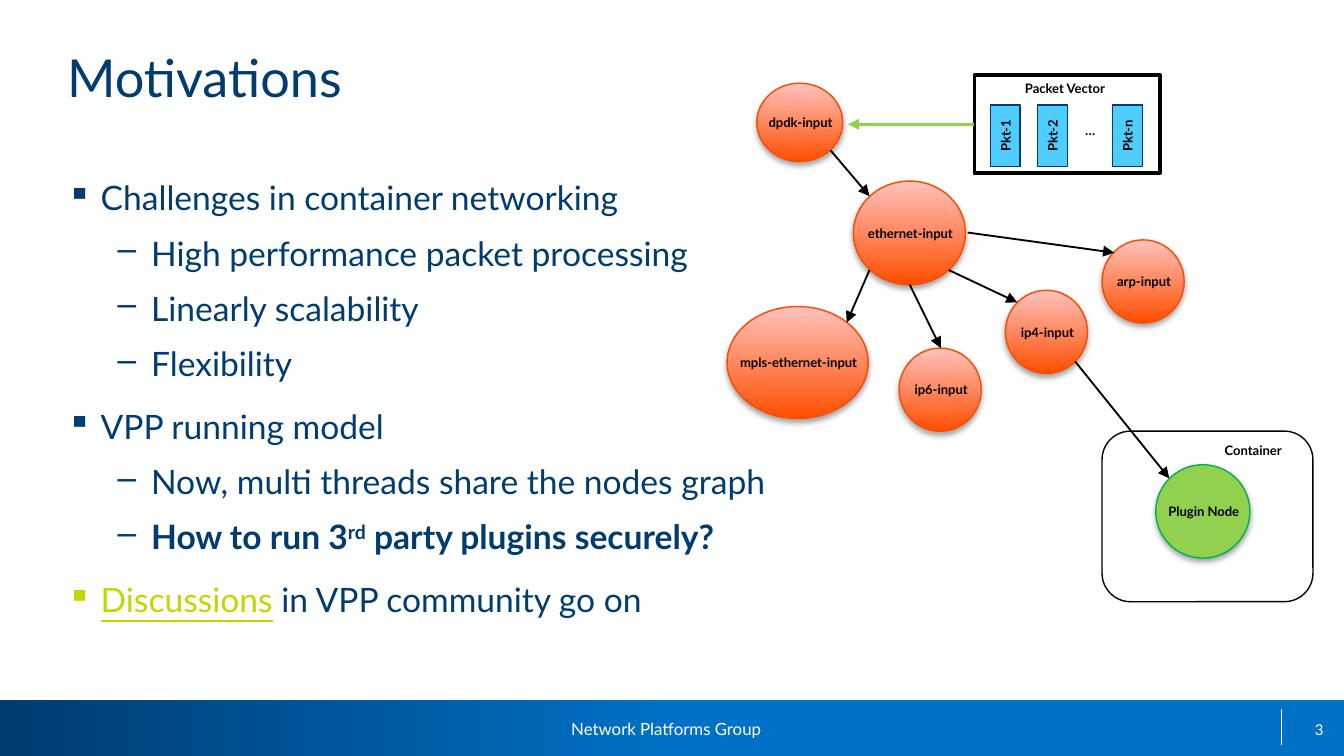
import dataclasses

import lxml.etree
import pptx
import pptx.dml.color
import pptx.enum.shapes
import pptx.enum.text
import pptx.oxml.ns
import pptx.util

Pt = pptx.util.Pt
qn = pptx.oxml.ns.qn
SHAPE = pptx.enum.shapes.MSO_SHAPE
ALIGN = pptx.enum.text.PP_ALIGN
ANCHOR = pptx.enum.text.MSO_ANCHOR


@dataclasses.dataclass(frozen=True)
class Theme:
    font: str = "Lato"
    navy: str = "003C71"
    blue: str = "0071C5"
    white: str = "FFFFFF"
    black: str = "000000"
    lime: str = "C3D600"
    packet: str = "50CDFF"
    node: tuple = ("FF4E00", "FFC2BD")
    node_line: str = "F94C00"
    plugin: str = "92D050"
    plugin_line: str = "00B050"
    title_size: float = 28
    body_size: float = 18
    footer_size: float = 9
    number_size: float = 8
    label_size: float = 7


def rgb(value):
    return pptx.dml.color.RGBColor.from_string(value)


class Deck:
    def __init__(self, theme):
        self.theme = theme
        self.prs = pptx.Presentation()
        self.prs.slide_width, self.prs.slide_height = Pt(720), Pt(405)
        self.s = self.prs.slides.add_slide(self.prs.slide_layouts[5])

    def style(self, r, size, color, bold=False):
        r.font.name = self.theme.font
        r.font.size = Pt(size)
        r.font.bold = bold
        r.font.color.rgb = rgb(color)

    def frame(self, tf, inset=(0, 0), anchor=ANCHOR.TOP, wrap=True):
        tf.margin_left = tf.margin_right = Pt(inset[0])
        tf.margin_top = tf.margin_bottom = Pt(inset[1])
        tf.vertical_anchor = anchor
        tf.word_wrap = wrap

    def set_text(self, tf, text, size, color, bold=False, align=ALIGN.LEFT):
        tf.text = text
        p = tf.paragraphs[0]
        p.alignment = align
        self.style(p.runs[0], size, color, bold)

    def title(self, text, box):
        sp = self.s.shapes.title
        sp.left, sp.top, sp.width, sp.height = map(Pt, box)
        self.frame(sp.text_frame)
        self.set_text(sp.text_frame, text, self.theme.title_size, self.theme.navy)

    def text(self, text, box, size, color, align=ALIGN.LEFT, anchor=ANCHOR.TOP):
        tf = self.s.shapes.add_textbox(*map(Pt, box)).text_frame
        self.frame(tf, anchor=anchor)
        self.set_text(tf, text, size, color, align=align)

    def label_text(self, tf, text):
        self.frame(tf, (7.2, 3.6), ANCHOR.MIDDLE, False)
        self.set_text(tf, text, self.theme.label_size, self.theme.black, True, ALIGN.CENTER)

    def label(self, text, cx, cy, width):
        sp = self.s.shapes.add_textbox(Pt(cx - width / 2), Pt(cy - 8), Pt(width), Pt(16))
        self.label_text(sp.text_frame, text)

    def bullets(self, items, box):
        tf = self.s.shapes.add_textbox(*map(Pt, box)).text_frame
        self.frame(tf)
        levels = {1: (18, 12, "▪"), 2: (45, 8, "–")}
        for i, (level, runs) in enumerate(items):
            p = tf.add_paragraph() if i else tf.paragraphs[0]
            left, before, char = levels[level]
            pPr = p._p.get_or_add_pPr()
            pPr.set("marL", str(Pt(left)))
            pPr.set("indent", str(-Pt(18)))
            lxml.etree.SubElement(pPr, qn("a:buChar")).set("char", char)
            p.level = level - 1
            p.space_before = Pt(before if i else 0)
            for text, look in runs:
                r = p.add_run()
                r.text = text
                color = self.theme.lime if look == "link" else self.theme.navy
                self.style(r, self.theme.body_size, color, look in ("bold", "super"))
                if look == "link":
                    r.font.underline = True
                if look == "super":
                    r._r.get_or_add_rPr().set("baseline", "30000")

    def shape(self, kind, box, fill=None, line=None, width=0.75):
        sp = self.s.shapes.add_shape(kind, *map(Pt, box))
        sp.shadow.inherit = False
        if fill:
            sp.fill.solid()
            sp.fill.fore_color.rgb = rgb(fill)
        else:
            sp.fill.background()
        if line:
            sp.line.color.rgb = rgb(line)
            sp.line.width = Pt(width)
        else:
            sp.line.fill.background()
        return sp

    def gradient(self, sp, colors, angle, end=1.0):
        sp.fill.gradient()
        sp.fill.gradient_angle = angle
        for stop, color, position in zip(sp.fill.gradient_stops, colors, (0, end)):
            stop.color.rgb = rgb(color)
            stop.position = position

    def node(self, text, box, label_width, plugin=False):
        t = self.theme
        line = t.plugin_line if plugin else t.node_line
        sp = self.shape(SHAPE.OVAL, box, t.plugin, line)
        if not plugin:
            self.gradient(sp, t.node, 90)
        effects = sp._element.spPr.find(qn("a:effectLst"))
        shadow = lxml.etree.SubElement(
            effects, qn("a:outerShdw"), blurRad=str(Pt(3.1)), dist=str(Pt(1.8)),
            dir="5400000", rotWithShape="0")
        color = lxml.etree.SubElement(shadow, qn("a:srgbClr"), val=t.black)
        lxml.etree.SubElement(color, qn("a:alpha"), val="35000")
        x, y, w, h = box
        self.label(text, x + w / 2 + 0.5, y + h / 2, label_width)

    def packet(self, text, cx, cy):
        sp = self.shape(SHAPE.RECTANGLE, (cx - 16.5, cy - 8, 33, 16),
                        self.theme.packet, self.theme.navy)
        sp.rotation = 270
        self.label_text(sp.text_frame, text)

    def line(self, start, end, color, width=1, arrow=True):
        c = self.s.shapes.add_connector(
            pptx.enum.shapes.MSO_CONNECTOR.STRAIGHT, *map(Pt, start + end))
        c.line.color.rgb = rgb(color)
        c.line.width = Pt(width)
        if arrow:
            ln = c._element.spPr.find(qn("a:ln"))
            lxml.etree.SubElement(ln, qn("a:tailEnd"), type="triangle")
        lxml.etree.SubElement(c._element.spPr, qn("a:effectLst"))
        return c


def main():
    t = Theme()
    d = Deck(t)

    bar = d.shape(SHAPE.RECTANGLE, (0, 375, 720, 30), t.blue)
    d.gradient(bar, (t.navy, t.blue), 0, 0.5)
    d.line((686.4, 380), (686.4, 399), t.white, 0.75, arrow=False)
    d.text("Network Platforms Group", (306, 385, 107, 13), t.footer_size, t.white)
    d.text("3", (541, 380, 168, 22), t.number_size, t.white, ALIGN.RIGHT, ANCHOR.MIDDLE)

    d.title("Motivations", (36, 24.5, 648, 68.5))
    d.bullets([
        (1, [("Challenges in container networking", "")]),
        (2, [("High performance packet processing", "")]),
        (2, [("Linearly scalability", "")]),
        (2, [("Flexibility", "")]),
        (1, [("VPP running model", "")]),
        (2, [("Now, multi threads share the nodes graph", "")]),
        (2, [("How to run 3", "bold"), ("rd", "super"), (" party plugins securely?", "bold")]),
        (1, [("Discussions", "link"), (" in VPP community go on", "")]),
    ], (36, 95, 648, 270))

    for text, box, label_width in [
        ("dpdk-input", (405.4, 44.6, 46, 42), 52),
        ("ethernet-input", (457.2, 97, 60, 55.6), 63),
        ("ip6-input", (481.7, 186.5, 44, 44.6), 45),
        ("ip4-input", (538.6, 155.5, 44, 44.6), 45),
        ("arp-input", (590.4, 128.5, 44, 44.6), 46),
        ("mpls-ethernet-input", (389.5, 164.2, 75.6, 60), 78),
    ]:
        d.node(text, box, label_width)

    for start, end in [
        ((445, 80.6), (465.8, 105.1)),
        ((487.4, 152.6), (504, 186.5)),
        ((508.3, 144.7), (545, 162)),
        ((518.4, 124.6), (596.9, 135.4)),
        ((465.8, 144.7), (453.6, 172.8)),
    ]:
        d.line(start, end, t.black)

    vector = d.shape(SHAPE.RECTANGLE, (522, 40.3, 99.4, 52.6), t.white, t.black, 2)
    d.label("Packet Vector", 570.5, 47.5, 60)
    for text, cx in [("Pkt-1", 538.6), ("Pkt-2", 563.8), ("Pkt-n", 604)]:
        d.packet(text, cx, 72.7)
    d.label("…", 584, 70, 20)
    feed = d.line((522, 66.6), (454.3, 66.6), t.plugin, 1.5)
    feed.begin_connect(vector, 1)

    d.node("Plugin Node", (619.2, 249, 50.4, 50), 55, plugin=True)
    d.line((576, 193.7), (626.4, 256.3), t.black)
    d.shape(SHAPE.ROUNDED_RECTANGLE, (590.4, 231, 113, 91.4), line=t.black)
    d.label("Container", 671.4, 241.2, 47)

    d.prs.save("out.pptx")


if __name__ == "__main__":
    main()
